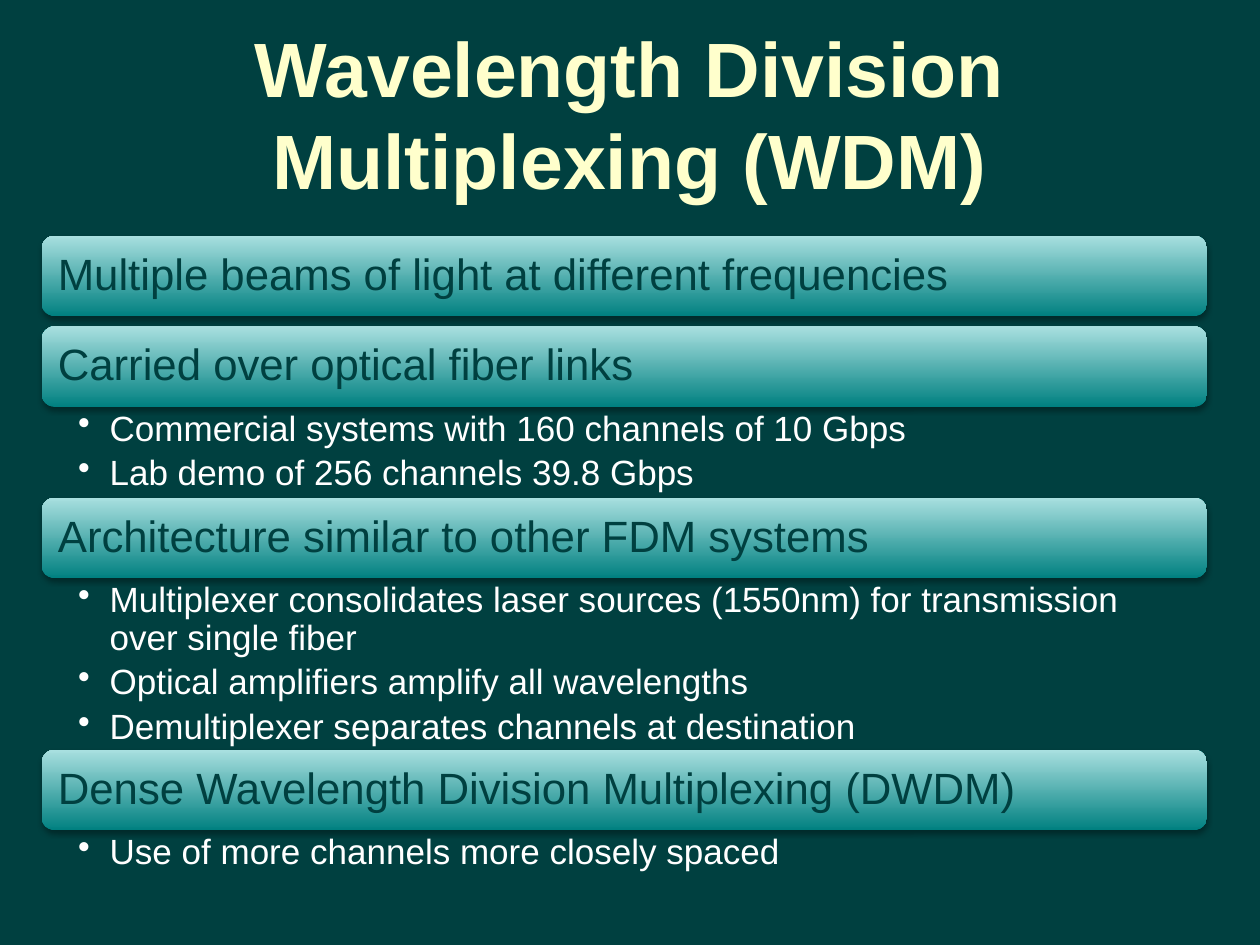
from lxml import etree
from pptx import Presentation
from pptx.dml.color import RGBColor
from pptx.enum.shapes import MSO_SHAPE
from pptx.enum.text import MSO_ANCHOR, PP_ALIGN
from pptx.oxml import parse_xml
from pptx.oxml.ns import nsdecls, qn
from pptx.util import Inches, Pt

ROUNDED_RECTANGLE = MSO_SHAPE.ROUNDED_RECTANGLE
MIDDLE, TOP = MSO_ANCHOR.MIDDLE, MSO_ANCHOR.TOP
LEFT, CENTER = PP_ALIGN.LEFT, PP_ALIGN.CENTER

DARK_TEAL = RGBColor(0x00, 0x40, 0x40)
TEAL = RGBColor(0x00, 0x80, 0x80)
PALE_TEAL = RGBColor(0xA9, 0xE0, 0xE0)
CREAM = RGBColor(0xFF, 0xFF, 0xCC)
WHITE = RGBColor(0xFF, 0xFF, 0xFF)

FONT = "Arial"
LIST_LEFT, LIST_WIDTH = 0.33, 9.25
BAR_HEIGHT, BAR_GAP = 0.64, 0.08

# Heading, bullets, height of the bullet block
TOPICS = [
    ("Multiple beams of light at different frequencies", [], BAR_GAP),
    ("Carried over optical fiber links",
     ["Commercial systems with 160 channels of 10 Gbps",
      "Lab demo of 256 channels 39.8 Gbps"], 0.72),
    ("Architecture similar to other FDM systems",
     ["Multiplexer consolidates laser sources (1550nm) for transmission over single fiber",
      "Optical amplifiers amplify all wavelengths",
      "Demultiplexer separates channels at destination"], 1.36),
    ("Dense Wavelength Division Multiplexing (DWDM)",
     ["Use of more channels more closely spaced"], 0.45),
]


def set_frame(frame, anchor, left, top, right, bottom):
    frame.word_wrap = True
    frame.vertical_anchor = anchor
    frame.margin_left, frame.margin_top = Inches(left), Inches(top)
    frame.margin_right, frame.margin_bottom = Inches(right), Inches(bottom)


def add_text(paragraph, text, size, color, bold=False, alignment=LEFT):
    paragraph.alignment = alignment
    run = paragraph.add_run()
    run.text = text
    run.font.name = FONT
    run.font.size = Pt(size)
    run.font.bold = bold
    run.font.color.rgb = color


def add_title(slide, text):
    box = slide.shapes.add_textbox(Inches(0.5), Inches(0.17), Inches(9), Inches(1.45))
    set_frame(box.text_frame, MIDDLE, 0.1, 0.05, 0.1, 0.05)
    add_text(box.text_frame.paragraphs[0], text, 44, CREAM, True, CENTER)


def add_soft_shadow(shape):
    shape.shadow.inherit = False
    effects = shape._element.spPr.find(qn("a:effectLst"))
    effects.append(parse_xml(
        f'<a:outerShdw {nsdecls("a")} blurRad="{Pt(3.1)}" dist="{Pt(1.8)}" '
        'dir="5400000" rotWithShape="0"><a:srgbClr val="000000">'
        '<a:alpha val="35000"/></a:srgbClr></a:outerShdw>'))


def add_bar(slide, top, text):
    bar = slide.shapes.add_shape(ROUNDED_RECTANGLE, Inches(LIST_LEFT), Inches(top),
                                 Inches(LIST_WIDTH), Inches(BAR_HEIGHT))
    bar.fill.gradient()
    bar.fill.gradient_angle = 90
    for stop, color, position in zip(bar.fill.gradient_stops, (TEAL, PALE_TEAL), (0, 1)):
        stop.color.rgb = color
        stop.position = position
    bar.line.fill.background()
    add_soft_shadow(bar)
    set_frame(bar.text_frame, MIDDLE, 0.1, 0.1, 0.1, 0.1)
    paragraph = bar.text_frame.paragraphs[0]
    paragraph.line_spacing = 0.9
    add_text(paragraph, text, 25, DARK_TEAL)


def set_bullet(paragraph):
    properties = paragraph._p.get_or_add_pPr()
    properties.set("marL", str(Inches(0.25)))
    properties.set("indent", str(Inches(-0.25)))
    etree.SubElement(properties, qn("a:buChar"), char="•")


def add_bullets(slide, top, height, bullets):
    box = slide.shapes.add_textbox(Inches(LIST_LEFT), Inches(top),
                                   Inches(LIST_WIDTH), Inches(height))
    frame = box.text_frame
    set_frame(frame, TOP, 0.29, 0.03, 0.19, 0.03)
    for index, text in enumerate(bullets):
        paragraph = frame.add_paragraph() if index else frame.paragraphs[0]
        paragraph.level = 1
        paragraph.line_spacing = 0.9
        paragraph.space_after = Pt(4)
        set_bullet(paragraph)
        add_text(paragraph, text, 20, WHITE)


def main():
    presentation = Presentation()
    presentation.slide_width, presentation.slide_height = Inches(10), Inches(7.5)
    slide = presentation.slides.add_slide(presentation.slide_layouts[6])
    slide.background.fill.solid()
    slide.background.fill.fore_color.rgb = DARK_TEAL

    add_title(slide, "Wavelength Division Multiplexing (WDM)")

    # Stack of heading bars, each followed by its bullets or a gap
    top = 1.87
    for heading, bullets, block_height in TOPICS:
        add_bar(slide, top, heading)
        top += BAR_HEIGHT
        if bullets:
            add_bullets(slide, top, block_height, bullets)
        top += block_height

    presentation.save("out.pptx")


if __name__ == "__main__":
    main()
